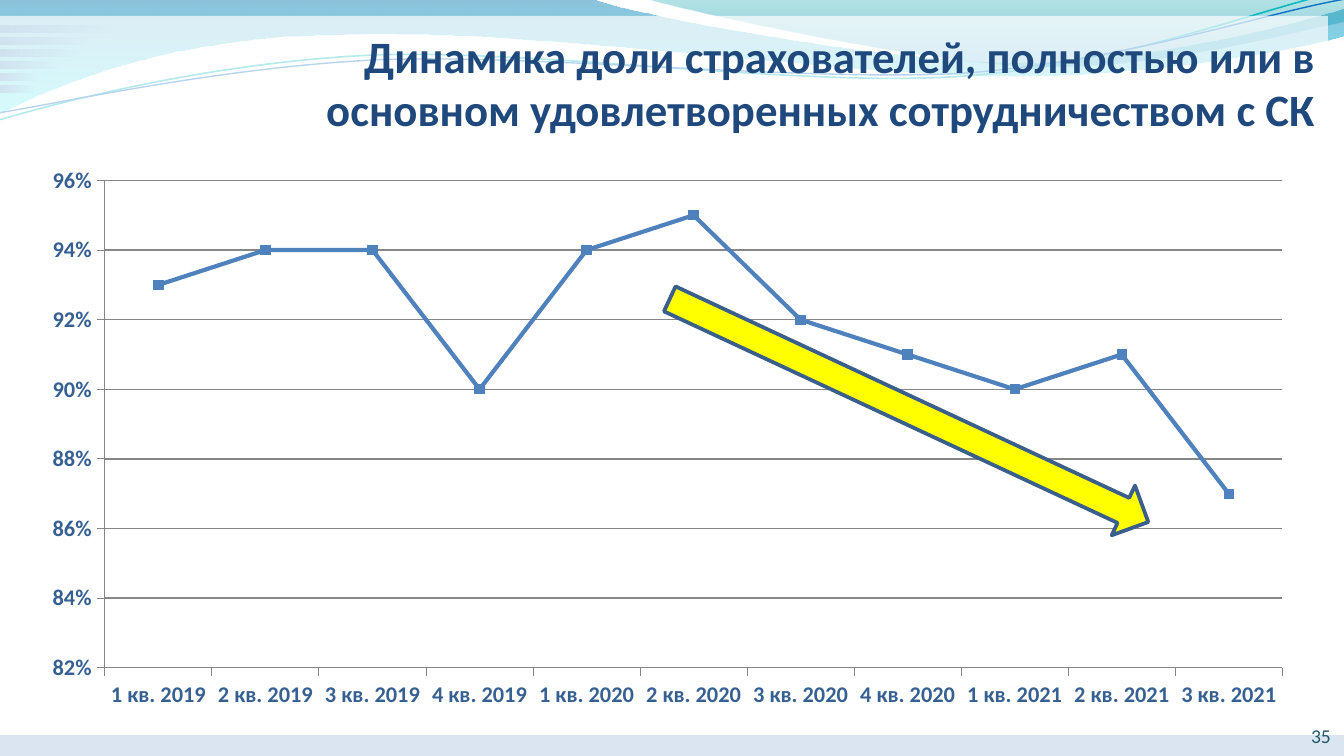
import dataclasses

import lxml.etree
import pptx
import pptx.chart.data
import pptx.dml.color
import pptx.enum.chart
import pptx.enum.shapes
import pptx.enum.text
import pptx.oxml.ns
import pptx.util

EMU_PER_PX = 914400 / 134.4


@dataclasses.dataclass(frozen=True)
class Theme:
    font: str = "Calibri"
    title: str = "1F497D"
    number: str = "215968"
    chart_text: str = "000000"
    axis_text: str = "376092"
    axis_line: str = "868686"
    series: str = "4F81BD"
    white: str = "FFFFFF"
    stripe: str = "D1E2EF"
    arrow: str = "FFFF00"
    arrow_line: str = "3A5F8C"
    wave_back: tuple = ((0, "0079AF", 45), (1, "00EBF8", 55))
    wave_front: tuple = ((0, "00A1A9", 30), (0.8, "008BBF", 45))
    curve_teal: str = "0AB8BF"
    curve_blue: str = "0F6FC6"
    title_size: int = 24
    chart_size: int = 18
    axis_size: int = 12
    number_size: float = 10.5


def px(n):
    return pptx.util.Emu(round(n * EMU_PER_PX))


def rgb(value):
    return pptx.dml.color.RGBColor.from_string(value)


def set_font(font, name, size, color, bold=False):
    font.name = name
    font.size = pptx.util.Pt(size)
    font.bold = bold
    font.color.rgb = rgb(color)


def write(tf, text, align, **fmt):
    p = tf.paragraphs[0]
    p.alignment = align
    r = p.add_run()
    r.text = text
    set_font(r.font, **fmt)


def set_line(line, color, width):
    line.color.rgb = rgb(color)
    line.width = pptx.util.Pt(width)


def set_alpha(sp, alphas):
    colors = list(sp._element.spPr.iter(pptx.oxml.ns.qn("a:srgbClr")))
    for color, alpha in zip(colors, alphas):
        node = lxml.etree.SubElement(color, pptx.oxml.ns.qn("a:alpha"))
        node.set("val", str(alpha * 1000))


def bend(sp, segments):
    lines = iter(list(sp._element.spPr.iter(pptx.oxml.ns.qn("a:lnTo"))))
    for seg in segments:
        first, *rest = [next(lines) for _ in range(len(seg) // 2)]
        if rest:
            first.tag = pptx.oxml.ns.qn("a:cubicBezTo")
        for line in rest:
            first.append(line[0])
            line.getparent().remove(line)


class Deck:
    def __init__(self, theme):
        self.theme = theme
        self.prs = pptx.Presentation()
        self.prs.slide_width, self.prs.slide_height = px(1344), px(756)
        self.s = self.prs.slides.add_slide(self.prs.slide_layouts[6])

    def group(self):
        return self.s.shapes.add_group_shape().shapes

    def gradient(self, sp, stops, angle):
        sp.fill.gradient()
        sp.fill.gradient_angle = angle
        for stop, (position, color, _) in zip(sp.fill.gradient_stops, stops):
            stop.position = position
            stop.color.rgb = rgb(color)
        set_alpha(sp, [alpha for _, _, alpha in stops])

    def freeform(self, shapes, start, segments, closed):
        points = [(px(x), px(y)) for seg in segments for x, y in zip(seg[::2], seg[1::2])]
        builder = shapes.build_freeform(*map(px, start))
        builder.add_line_segments(points, close=closed)
        sp = builder.convert_to_shape()
        bend(sp, segments)
        sp.shadow.inherit = False
        return sp

    def wave(self, start, segments, stops):
        sp = self.freeform(self.s.shapes, start, segments, True)
        sp.line.fill.background()
        self.gradient(sp, stops, 270)

    def curve(self, shapes, start, segments, color, width):
        sp = self.freeform(shapes, start, segments, False)
        sp.rotation = 357.3
        sp.fill.background()
        set_line(sp.line, color, width)

    def shape(self, shapes, kind, box):
        sp = shapes.add_shape(kind, *map(px, box))
        sp.shadow.inherit = False
        sp.line.fill.background()
        return sp

    def panel(self, box, color, alpha):
        sp = self.shape(self.s.shapes, pptx.enum.shapes.MSO_SHAPE.RECTANGLE, box)
        sp.fill.solid()
        sp.fill.fore_color.rgb = rgb(color)
        set_alpha(sp, [alpha])

    def stripe(self, shapes, box):
        sp = self.shape(shapes, pptx.enum.shapes.MSO_SHAPE.RECTANGLE, box)
        self.gradient(sp, ((0, self.theme.stripe, 100), (1, self.theme.stripe, 0)), 0)

    def arrow(self, box, rotation):
        sp = self.shape(self.s.shapes, pptx.enum.shapes.MSO_SHAPE.RIGHT_ARROW, box)
        sp.rotation = rotation
        sp.fill.solid()
        sp.fill.fore_color.rgb = rgb(self.theme.arrow)
        set_line(sp.line, self.theme.arrow_line, 2)

    def text(self, box, text, **fmt):
        tf = self.s.shapes.add_textbox(*map(px, box)).text_frame
        tf.word_wrap = True
        tf.vertical_anchor = pptx.enum.text.MSO_ANCHOR.MIDDLE
        write(tf, text, pptx.enum.text.PP_ALIGN.RIGHT, name=self.theme.font, **fmt)

    def line_chart(self, box, cats, vals):
        t = self.theme
        data = pptx.chart.data.CategoryChartData(number_format="0%")
        data.categories = cats
        data.add_series("Series 1", vals)
        kind = pptx.enum.chart.XL_CHART_TYPE.LINE_MARKERS
        chart = self.s.shapes.add_chart(kind, *map(px, box), data).chart
        chart.has_legend = chart.has_title = False
        set_font(chart.font, t.font, t.chart_size, t.chart_text)
        plot = chart.plots[0]
        plot.vary_by_categories = False
        series = plot.series[0]
        series.smooth = False
        set_line(series.format.line, t.series, 2.25)
        series.marker.style = pptx.enum.chart.XL_MARKER_STYLE.SQUARE
        series.marker.size = 5
        series.marker.format.fill.solid()
        series.marker.format.fill.fore_color.rgb = rgb(t.series)
        for axis in (chart.category_axis, chart.value_axis):
            set_font(axis.tick_labels.font, t.font, t.axis_size, t.axis_text, True)
            set_line(axis.format.line, t.axis_line, 0.5)
            axis.major_tick_mark = pptx.enum.chart.XL_TICK_MARK.OUTSIDE
        axis = chart.value_axis
        axis.minimum_scale, axis.maximum_scale, axis.major_unit = 0.82, 0.96, 0.02
        axis.tick_labels.number_format = "0%"
        axis.tick_labels.number_format_is_linked = False
        set_line(axis.major_gridlines.format.line, t.axis_line, 0.75)


def main():
    t = Theme()
    deck = Deck(t)
    deck.wave((0, 0), [(591, -1), (640, 17, 892, 63, 1019, 63), (1146, 63, 1288, 26, 1344, 9),
                       (1345, 36), (1321, 44, 1169, 77, 1003, 77),
                       (836, 75, 513, 28, 345, 35), (173, 36, 62, 83, -1, 114)], t.wave_back)
    deck.wave((644, -1), [(684, 11, 917, 62, 1034, 66), (1150, 70, 1292, 32, 1344, 22),
                          (1344, 0)], t.wave_front)
    curves = deck.group()
    deck.curve(curves, (-2, 88), [(64, 72, 212, 41, 372, 41), (533, 42, 794, 93, 956, 90),
                                  (1119, 87, 1264, 36, 1343, 23)], t.curve_teal, 0.85)
    deck.curve(curves, (-2, 81), [(62, 74, 220, 46, 380, 46), (542, 48, 801, 88, 961, 87),
                                  (1123, 83, 1266, 41, 1346, 31)], t.curve_blue, 0.75)
    deck.panel((0, 16, 1328, 116), t.white, 70)
    stripes = deck.group()
    for i, width in enumerate((112, 89, 79, 58, 38, 34)):
        deck.stripe(stripes, (0, 26 + 12 * i, width, 7))
    deck.panel((0, 735, 1344, 21), t.series, 20)
    deck.text((1031, 716, 313, 40), "35", size=t.number_size, color=t.number)
    deck.text((238, 19, 1090, 126),
              "Динамика доли страхователей, полностью или в основном "
              "удовлетворенных сотрудничеством с СК",
              size=t.title_size, color=t.title, bold=True)
    quarters = [f"{q} кв. {year}" for year in (2019, 2020, 2021) for q in range(1, 5)][:11]
    shares = (0.93, 0.94, 0.94, 0.9, 0.94, 0.95, 0.92, 0.91, 0.9, 0.91, 0.87)
    deck.line_chart((27, 156, 1281, 563), quarters, shares)
    deck.arrow((645, 383, 528, 55), 25)
    deck.prs.save("out.pptx")


if __name__ == "__main__":
    main()
